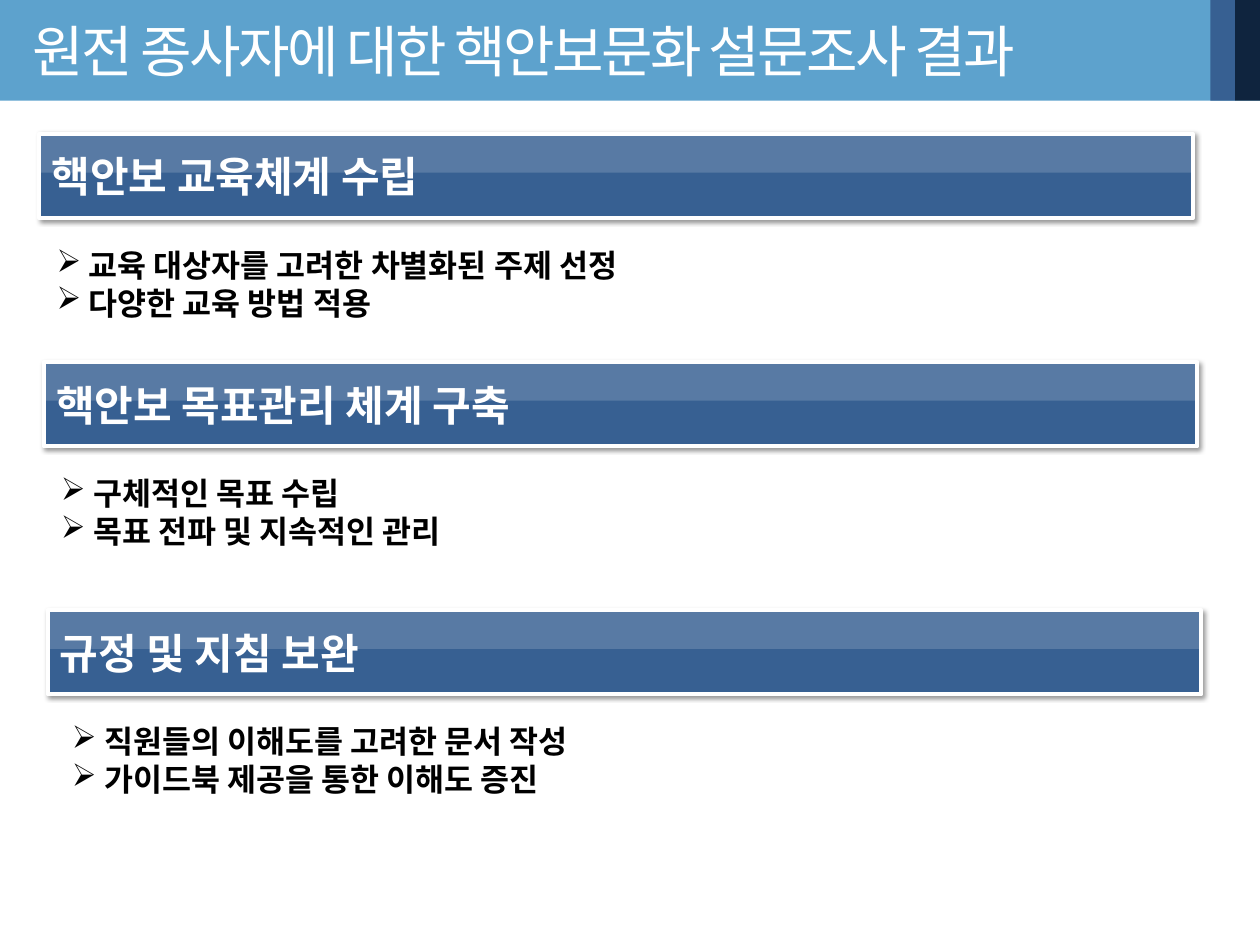
from dataclasses import dataclass

from lxml import etree
from pptx import Presentation
from pptx.dml.color import RGBColor
from pptx.enum.shapes import MSO_SHAPE
from pptx.enum.text import MSO_ANCHOR, MSO_AUTO_SIZE, PP_ALIGN
from pptx.oxml.ns import qn
from pptx.util import Cm, Pt

RECTANGLE = MSO_SHAPE.RECTANGLE
TOP, MIDDLE = MSO_ANCHOR.TOP, MSO_ANCHOR.MIDDLE
LEFT = PP_ALIGN.LEFT
FIT_SHAPE, NO_FIT = MSO_AUTO_SIZE.SHAPE_TO_FIT_TEXT, MSO_AUTO_SIZE.NONE
TITLE_ONLY = 5
FONT = "Noto Sans CJK KR"
WHITE, BLACK, NAVY = "FFFFFF", "000000", "376092"
BULLET_INDENT = Cm(0.65)


@dataclass
class Band:
    left: float
    width: float
    color: str


@dataclass
class Section:
    left: float
    top: float
    heading: str
    list_left: float
    list_width: float
    points: list[str]
    wrap: bool = False


BANDS = [
    Band(0, 25.4, "5DA2CD"),
    Band(24.4, 0.5, NAVY),
    Band(24.9, 0.5, "0F243E"),
]
SECTIONS = [
    Section(0.79, 2.7, "핵안보 교육체계 수립", 0.89, 13.28,
            ["교육 대상자를 고려한 차별화된 주제 선정", "다양한 교육 방법 적용"]),
    Section(0.88, 7.3, "핵안보 목표관리 체계 구축", 0.98, 13.8,
            ["구체적인 목표 수립", "목표 전파 및 지속적인 관리"], wrap=True),
    Section(0.96, 12.3, "규정 및 지침 보완", 1.2, 11.79,
            ["직원들의 이해도를 고려한 문서 작성", "가이드북 제공을 통한 이해도 증진"]),
]


def paint(color_format, color: str) -> None:
    color_format.rgb = RGBColor.from_string(color)


def add_child(parent, tag: str, **attributes):
    """Append a DrawingML element to parent."""
    return etree.SubElement(parent, qn(tag), {k: str(v) for k, v in attributes.items()})


def style_text(para, size: float, color: str, bold: bool) -> None:
    para.alignment = LEFT
    for span in para.runs:
        span.font.size = Pt(size)
        span.font.bold = bold
        span.font.name = FONT
        paint(span.font.color, color)
        add_child(span.font._element, "a:ea", typeface=FONT)


def add_bar(page, left: float, top: float, width: float, height: float, color: str):
    bar = page.shapes.add_shape(RECTANGLE, Cm(left), Cm(top), Cm(width), Cm(height))
    bar.shadow.inherit = False
    bar.fill.solid()
    paint(bar.fill.fore_color, color)
    bar.line.fill.background()
    return bar


def add_shadow(shape) -> None:
    effects = shape.element.spPr.find(qn("a:effectLst"))
    shadow = add_child(effects, "a:outerShdw", blurRad=Pt(3), dist=Pt(1),
                       dir=45 * 60000, algn="tl", rotWithShape=0)
    color = add_child(shadow, "a:srgbClr", val=BLACK)
    add_child(color, "a:alpha", val=40000)


def add_heading(page, section: Section) -> None:
    """Draw the heading bar with a translucent gloss over its upper half."""
    bar = add_bar(page, section.left, section.top, 23.26, 1.7, NAVY)
    paint(bar.line.color, WHITE)
    bar.line.width = Pt(2.25)
    add_shadow(bar)
    frame = bar.text_frame
    frame.vertical_anchor = MIDDLE
    frame.text = section.heading
    style_text(frame.paragraphs[0], 24, WHITE, True)

    gloss = add_bar(page, section.left, section.top + 0.04, 23.26, 0.74, WHITE)
    color = gloss.element.spPr.find(qn("a:solidFill")).find(qn("a:srgbClr"))
    add_child(color, "a:alpha", val=17000)


def add_points(page, section: Section) -> None:
    box = page.shapes.add_textbox(Cm(section.list_left), Cm(section.top + 2.13),
                                  Cm(section.list_width), Cm(1.8))
    frame = box.text_frame
    frame.word_wrap = section.wrap
    frame.auto_size = FIT_SHAPE
    frame.text = "\n".join(section.points)
    for para in frame.paragraphs:
        style_text(para, 18, BLACK, True)
        properties = para._p.get_or_add_pPr()
        properties.set("marL", str(BULLET_INDENT))
        properties.set("indent", str(-BULLET_INDENT))
        add_child(properties, "a:buChar", char="➢")


def add_title(page, text: str) -> None:
    title = page.shapes.title
    title.left, title.top, title.width, title.height = Cm(0.41), Cm(0.2), Cm(22.86), Cm(2.06)
    frame = title.text_frame
    frame.text = text
    frame.vertical_anchor = TOP
    frame.auto_size = NO_FIT
    para = frame.paragraphs[0]
    style_text(para, 32, WHITE, False)
    para.runs[0].font._element.set("spc", "-150")
    # The title comes first in the layout, so bring it in front of the bands.
    title.element.getparent().append(title.element)


def main() -> None:
    deck = Presentation()
    deck.slide_width, deck.slide_height = Cm(25.4), Cm(19.05)
    page = deck.slides.add_slide(deck.slide_layouts[TITLE_ONLY])
    for band in BANDS:
        add_bar(page, band.left, 0, band.width, 2.03, band.color)
    add_title(page, "원전 종사자에 대한 핵안보문화 설문조사 결과")
    for section in SECTIONS:
        add_heading(page, section)
        add_points(page, section)
    deck.save("out.pptx")


if __name__ == "__main__":
    main()
